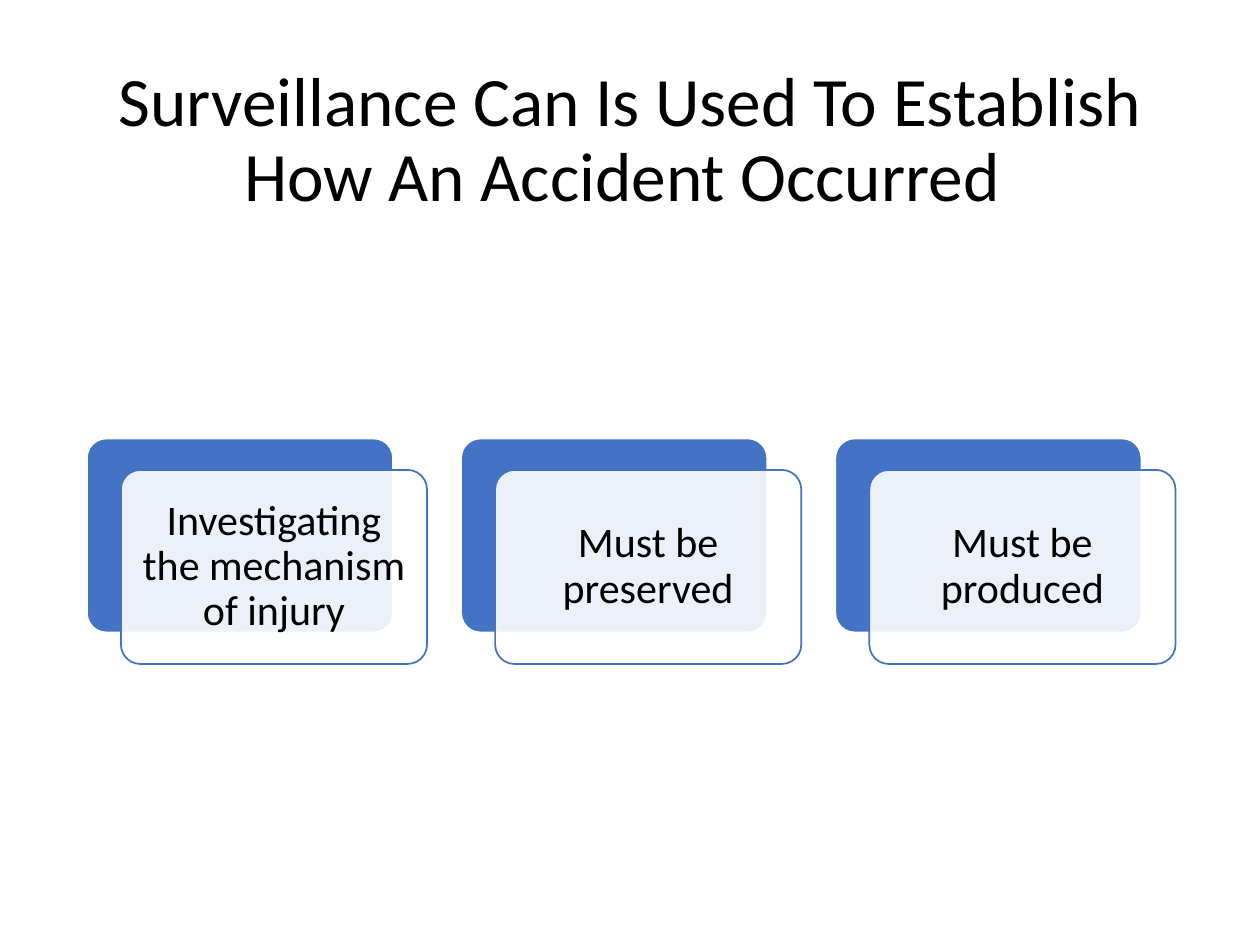
from lxml import etree
from pptx import Presentation
from pptx.dml.color import RGBColor
from pptx.enum.shapes import MSO_SHAPE
from pptx.enum.text import MSO_ANCHOR, PP_ALIGN
from pptx.oxml.ns import qn
from pptx.util import Inches, Pt

ROUNDED = MSO_SHAPE.ROUNDED_RECTANGLE
MIDDLE = MSO_ANCHOR.MIDDLE
CENTER = PP_ALIGN.CENTER
TITLE_ONLY = 5

COLORS = {"blue": "4472C4", "white": "FFFFFF", "black": "000000"}
FONT = "Calibri"

TITLE = "Surveillance Can Is Used To Establish How An Accident Occurred "
STEPS = ["Investigating the mechanism of injury", "Must be preserved", "Must be produced"]

CARD_WIDTH, CARD_HEIGHT = 2.43, 1.54
CARD_PITCH = 2.97
OFFSET_X, OFFSET_Y = 0.27, 0.25


def color(name):
    return RGBColor.from_string(COLORS[name])


def write(shape, text, size, margins):
    frame = shape.text_frame
    frame_format = {"word_wrap": True, "vertical_anchor": MIDDLE, **margins}
    for key, value in frame_format.items():
        setattr(frame, key, value)
    frame.text = text
    paragraph = frame.paragraphs[0]
    paragraph.alignment = CENTER
    paragraph.line_spacing = 0.9
    for key, value in {"name": FONT, "size": Pt(size), "bold": False}.items():
        setattr(paragraph.font, key, value)
    paragraph.font.color.rgb = color("black")


def add_title(slide, left, top, width, height):
    title = slide.shapes.title
    box = {"left": left, "top": top, "width": width, "height": height}
    for key, value in box.items():
        setattr(title, key, Inches(value))
    write(title, TITLE, 39.6, {})


def add_panel(shapes, left, top, fill, line):
    panel = shapes.add_shape(ROUNDED, Inches(left), Inches(top),
                             Inches(CARD_WIDTH), Inches(CARD_HEIGHT))
    panel.adjustments[0] = 0.1
    panel.shadow.inherit = False
    panel.fill.solid()
    panel.fill.fore_color.rgb = color(fill)
    panel.line.color.rgb = color(line)
    panel.line.width = Pt(1)
    return panel


def set_opacity(shape, percent):
    fill_color = shape.fill._xPr.find(qn("a:solidFill"))[0]
    etree.SubElement(fill_color, qn("a:alpha"), val=str(percent * 1000))


def add_step(shapes, text, left, top):
    """Stack a translucent caption card, shifted down and right, on a blue panel."""
    add_panel(shapes, left, top, "blue", "white")
    card = add_panel(shapes, left + OFFSET_X, top + OFFSET_Y, "white", "blue")
    set_opacity(card, 90)
    sides = ("left", "top", "right", "bottom")
    write(card, text, 24, {f"margin_{side}": Inches(0.1) for side in sides})


def add_steps(slide, left, top):
    group = slide.shapes.add_group_shape()
    for index, text in enumerate(STEPS):
        add_step(group.shapes, text, left + index * CARD_PITCH, top)


def main():
    prs = Presentation()
    prs.slide_width, prs.slide_height = Inches(10), Inches(7.5)
    slide = prs.slides.add_slide(prs.slide_layouts[TITLE_ONLY])
    add_title(slide, 0.69, 0.4, 8.62, 1.45)
    add_steps(slide, 0.69, 3.48)
    prs.save("out.pptx")


if __name__ == "__main__":
    main()
